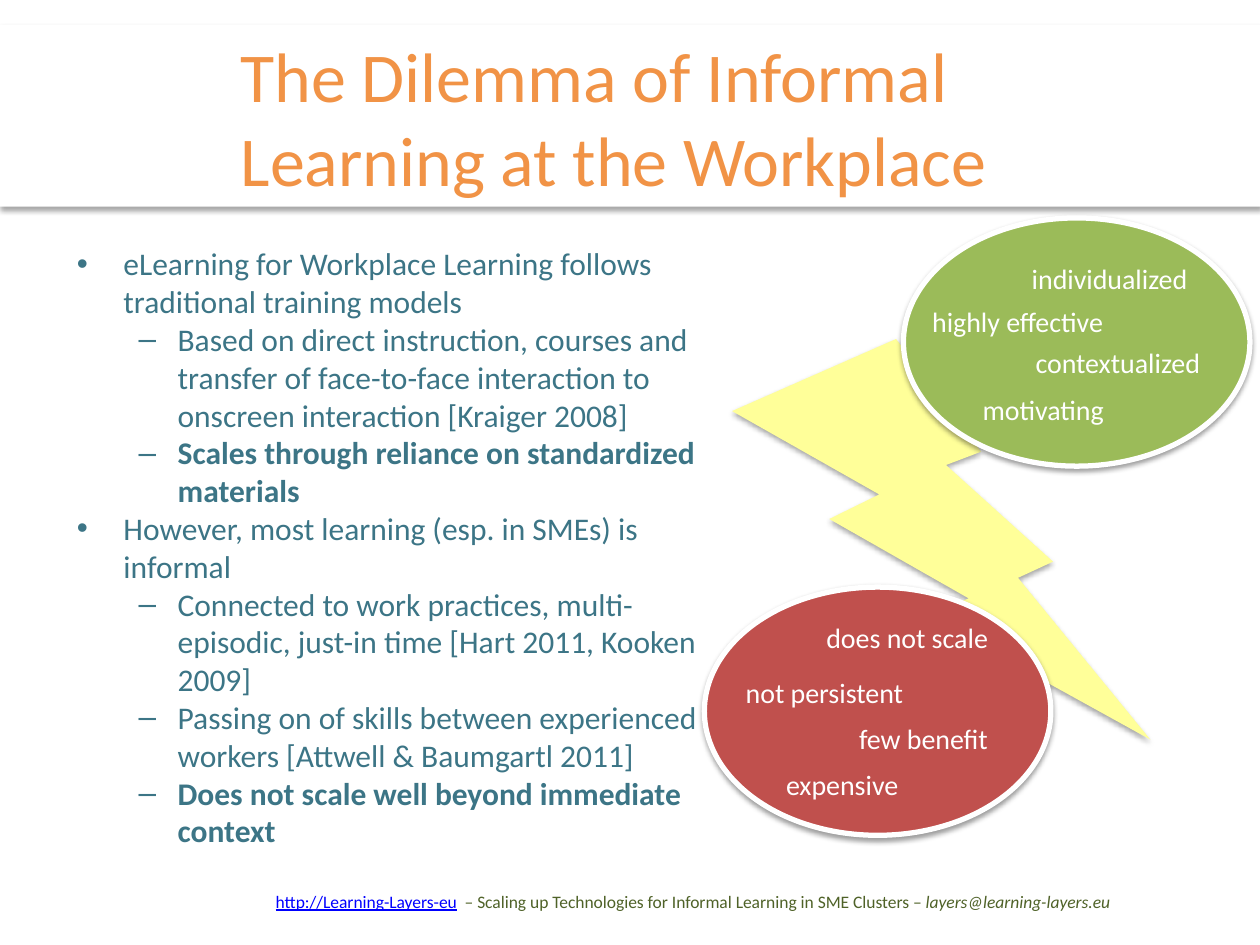
from dataclasses import dataclass

from lxml.etree import SubElement
from pptx import Presentation
from pptx.dml.color import RGBColor
from pptx.enum.shapes import MSO_SHAPE
from pptx.enum.text import MSO_ANCHOR, MSO_AUTO_SIZE, PP_ALIGN
from pptx.oxml.ns import qn
from pptx.util import Inches, Pt


@dataclass(frozen=True)
class Theme:
    font: str = "Calibri"
    title: str = "F19346"
    body: str = "3C7586"
    footer: str = "4F6228"
    address: str = "0000FF"
    white: str = "FFFFFF"
    conflict: str = "FFFF99"
    benefit: str = "9BBB59"
    drawback: str = "C0504D"
    shadow: str = "000000"
    title_size: int = 40
    body_size: int = 18
    label_size: int = 16
    footer_size: int = 10
    outline: int = 3


class DilemmaSlide:
    COLUMNS, ROWS = 100, 75
    LEVELS = (("•", 0.38, -0.37), ("–", 0.81, -0.31))

    def __init__(self, deck, theme):
        self.theme = theme
        self.column = deck.slide_width / self.COLUMNS
        self.row = deck.slide_height / self.ROWS
        self.slide = deck.slides.add_slide(deck.slide_layouts[1])
        self.shapes = self.slide.shapes

    def place(self, left, top, width, height):
        return (round(left * self.column), round(top * self.row),
                round(width * self.column), round(height * self.row))

    def move(self, holder, area):
        holder.left, holder.top, holder.width, holder.height = self.place(*area)
        holder.text_frame.auto_size = MSO_AUTO_SIZE.NONE

    def style(self, font, size, color):
        font.name = self.theme.font
        font.size = Pt(size)
        font.color.rgb = RGBColor.from_string(color)

    def title(self, wording, area):
        heading = self.shapes.title
        self.move(heading, area)
        frame = heading.text_frame
        frame.text = wording
        frame.vertical_anchor = MSO_ANCHOR.MIDDLE
        line = frame.paragraphs[0]
        line.alignment = PP_ALIGN.LEFT
        self.style(line.font, self.theme.title_size, self.theme.title)

    def bullets(self, points, area):
        body = self.slide.placeholders[1]
        self.move(body, area)
        frame = body.text_frame
        frame.text = "\n".join(wording for _, wording, _ in points)
        for point, (level, _, bold) in zip(frame.paragraphs, points):
            mark, margin, indent = self.LEVELS[level]
            point.level = level
            properties = point._p.get_or_add_pPr()
            properties.set("marL", str(Inches(margin)))
            properties.set("indent", str(Inches(indent)))
            tint = SubElement(properties, qn("a:buClr"))
            SubElement(tint, qn("a:srgbClr"), val=self.theme.body)
            SubElement(properties, qn("a:buFont"), typeface="Arial")
            SubElement(properties, qn("a:buChar"), char=mark)
            point.space_before = Pt(0)
            self.style(point.font, self.theme.body_size, self.theme.body)
            point.font.bold = bold

    def figure(self, preset, area, fill, outlined=False, opacity=35, distance=1.8):
        figure = self.shapes.add_shape(preset, *self.place(*area))
        figure.fill.solid()
        figure.fill.fore_color.rgb = RGBColor.from_string(fill)
        if outlined:
            figure.line.color.rgb = RGBColor.from_string(self.theme.white)
            figure.line.width = Pt(self.theme.outline)
        else:
            figure.line.fill.background()
        figure.shadow.inherit = False
        effects = figure.element.spPr.find(qn("a:effectLst"))
        shade = SubElement(effects, qn("a:outerShdw"), blurRad=str(Pt(3.1)),
                           dist=str(Pt(distance)), dir="5400000", rotWithShape="0")
        tint = SubElement(shade, qn("a:srgbClr"), val=self.theme.shadow)
        SubElement(tint, qn("a:alpha"), val=str(opacity * 1000))
        return figure

    def band(self, area):
        band = self.figure(MSO_SHAPE.RECTANGLE, area, self.theme.white)
        self.shapes.element.insert(2, band.element)

    def bolt(self, area):
        self.figure(MSO_SHAPE.LIGHTNING_BOLT, area, self.theme.conflict)

    def bubble(self, left, top, fill, labels):
        self.figure(MSO_SHAPE.OVAL, (left, top, 27.5, 19.7), fill,
                    outlined=True, opacity=38, distance=1.6)
        for wording, *area in labels:
            self.label(wording, (*area, 3.6))

    def label(self, wording, area):
        frame = self.shapes.add_textbox(*self.place(*area)).text_frame
        frame.word_wrap = False
        frame.auto_size = MSO_AUTO_SIZE.SHAPE_TO_FIT_TEXT
        frame.text = wording
        self.style(frame.paragraphs[0].font, self.theme.label_size, self.theme.white)

    def footer(self, address, project, contact, area):
        frame = self.shapes.add_textbox(*self.place(*area)).text_frame
        frame.word_wrap = True
        line = frame.paragraphs[0]
        self.style(line.font, self.theme.footer_size, self.theme.footer)
        link, _, mail = [line.add_run() for _ in range(3)]
        for run, wording in zip(line.runs, (address, project, contact)):
            run.text = wording
        link.font.color.rgb = RGBColor.from_string(self.theme.address)
        link.font.underline = True
        mail.font.italic = True


def main():
    deck = Presentation()
    deck.slide_width, deck.slide_height = Inches(10), Inches(7.5)
    theme = Theme()
    slide = DilemmaSlide(deck, theme)
    slide.band((0, 2, 100, 14.4))
    slide.title("The Dilemma of Informal Learning at the Workplace",
                (18.1, 3, 76.8, 12.5))
    slide.bullets([
        (0, "eLearning for Workplace Learning follows traditional training models", False),
        (1, "Based on direct instruction, courses and transfer of face-to-face "
            "interaction to onscreen interaction [Kraiger 2008]", False),
        (1, "Scales through reliance on standardized materials", True),
        (0, "However, most learning (esp. in SMEs) is informal", False),
        (1, "Connected to work practices, multi-episodic, just-in time "
            "[Hart 2011, Kooken 2009]", False),
        (1, "Passing on of skills between experienced workers "
            "[Attwell & Baumgartl 2011]", False),
        (1, "Does not scale well beyond immediate context", True),
    ], (5, 18.9, 52.9, 46.2))
    slide.bolt((58.1, 26.9, 33.2, 31.8))
    slide.bubble(71.7, 17.3, theme.benefit, [
        ("highly effective", 73, 23.7, 16.1),
        ("individualized", 80.9, 20.3, 14.4),
        ("contextualized", 81.2, 26.9, 16.1),
        ("motivating", 77, 30.7, 12.2),
    ])
    slide.bubble(55.9, 46.6, theme.drawback, [
        ("does not scale", 64.6, 48.8, 15),
        ("not persistent", 58.2, 53.1, 14.6),
        ("few benefit", 67.2, 56.8, 12.3),
        ("expensive", 61.4, 60.4, 11),
    ])
    slide.footer("http://Learning-Layers-eu",
                 "  – Scaling up Technologies for Informal Learning in SME Clusters – ",
                 "layers@learning-layers.eu", (20.9, 70.2, 69.3, 2.6))
    deck.save("out.pptx")


if __name__ == "__main__":
    main()
